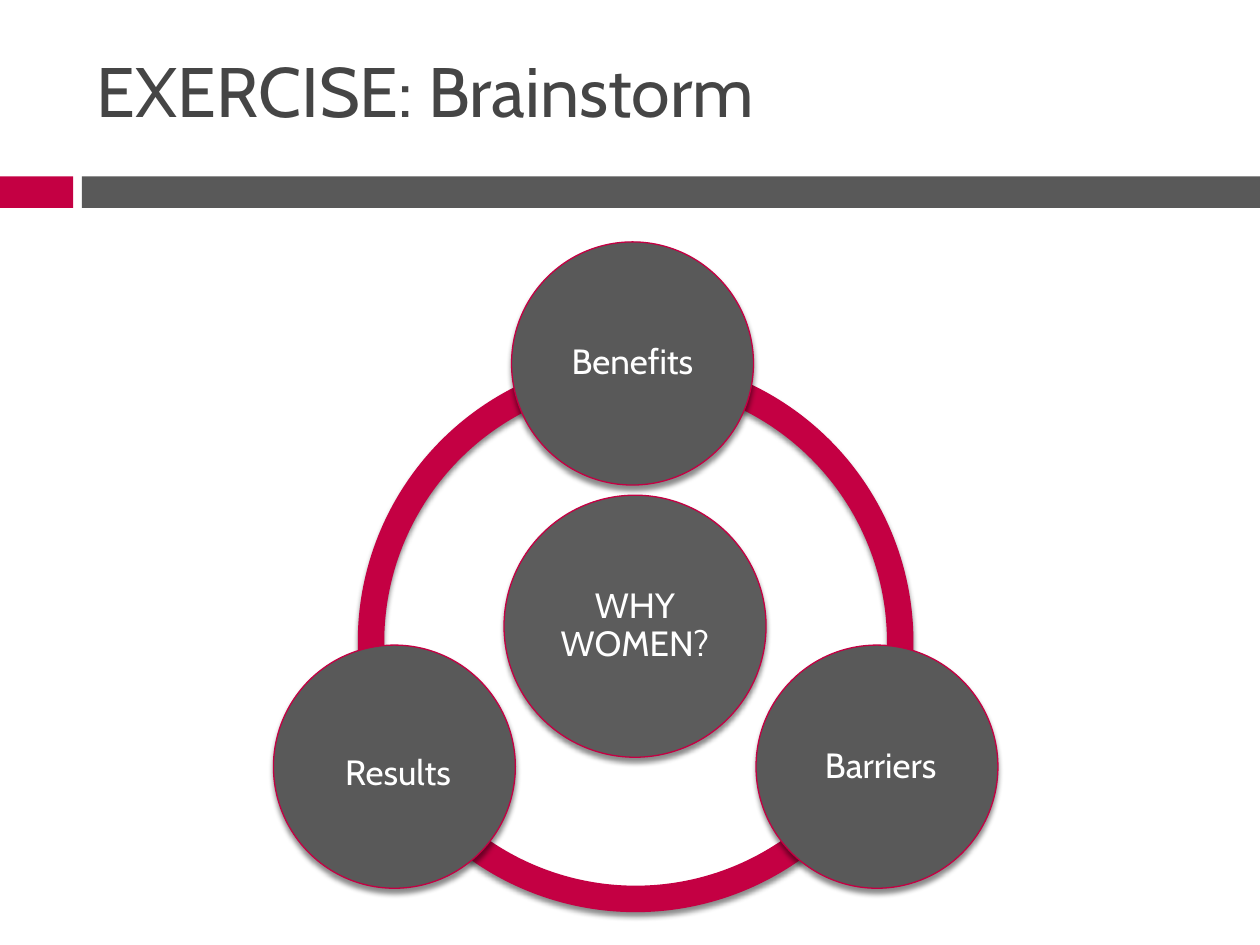
from lxml import etree
from pptx import Presentation
from pptx.dml.color import RGBColor
from pptx.enum.shapes import MSO_SHAPE as SHAPE
from pptx.enum.text import MSO_ANCHOR as ANCHOR, PP_ALIGN as ALIGN
from pptx.oxml import parse_xml
from pptx.oxml.ns import nsdecls, qn
from pptx.util import Inches, Pt

CRIMSON = RGBColor(0xC4, 0x00, 0x43)
GRAY = RGBColor(0x59, 0x59, 0x59)
HUB_GRAY = RGBColor(0x5C, 0x5C, 0x5C)
TITLE_GRAY = RGBColor(0x45, 0x45, 0x45)
WHITE = RGBColor(0xFF, 0xFF, 0xFF)

RING = 4.53
RING_THICKNESS = 0.0464
NODE_W, NODE_H = 1.92, 1.93
HUB = 2.08


class Deck:
    font = "Cabin"

    def __init__(self, width, height):
        self.prs = Presentation()
        self.prs.slide_width = Inches(width)
        self.prs.slide_height = Inches(height)
        self.s = self.prs.slides.add_slide(self.prs.slide_layouts[6])

    def shape(self, kind, x, y, w, h, fill, line=None):
        sp = self.s.shapes.add_shape(kind, Inches(x), Inches(y), Inches(w), Inches(h))
        sp.shadow.inherit = False
        sp.fill.solid()
        sp.fill.fore_color.rgb = fill
        if line is None:
            sp.line.fill.background()
        else:
            sp.line.color.rgb = line
            sp.line.width = Pt(0.75)
        return sp

    def drop_shadow(self, sp):
        effects = sp._element.spPr.find(qn("a:effectLst"))
        effects.append(parse_xml(
            f'<a:outerShdw {nsdecls("a")} blurRad="{Pt(3)}" dist="{Pt(2.4)}" '
            'dir="5400000" rotWithShape="0"><a:srgbClr val="000000">'
            '<a:alpha val="45000"/></a:srgbClr></a:outerShdw>'))

    def arc(self, x, y, start, end):
        """Ring segment running clockwise between two angles in degrees."""
        sp = self.shape(SHAPE.BLOCK_ARC, x, y, RING, RING, CRIMSON)
        for i, value in enumerate((start * 0.6, end * 0.6, RING_THICKNESS)):
            sp.adjustments[i] = value
        self.drop_shadow(sp)

    def circle(self, x, y, w, h, fill):
        self.drop_shadow(self.shape(SHAPE.OVAL, x, y, w, h, fill, CRIMSON))

    def text(self, x, y, w, h, text, size=20, color=WHITE, align=ALIGN.CENTER,
             margin=None, spacing=None):
        box = self.s.shapes.add_textbox(Inches(x), Inches(y), Inches(w), Inches(h))
        tf = box.text_frame
        tf.word_wrap = True
        tf.vertical_anchor = ANCHOR.MIDDLE
        if margin is not None:
            tf.margin_left = tf.margin_right = Inches(margin)
            tf.margin_top = tf.margin_bottom = Inches(margin)
        p = tf.paragraphs[0]
        p.alignment = align
        if spacing is not None:
            p.line_spacing = spacing
        r = p.add_run()
        r.text = text
        r.font.name = self.font
        r.font.size = Pt(size)
        r.font.color.rgb = color

    def label(self, x, y, w, h, inset, text):
        """Text in the square that fits inside a circle."""
        self.text(x + inset, y + inset, w - 2 * inset, h - 2 * inset, text,
                  margin=0.03, spacing=0.9)


def main():
    deck = Deck(10, 7.5)

    deck.shape(SHAPE.RECTANGLE, 0, 1.4, 0.58, 0.25, CRIMSON)
    deck.shape(SHAPE.RECTANGLE, 0.65, 1.4, 9.35, 0.25, GRAY)
    deck.text(0.67, 0.17, 9.33, 1.08, "EXERCISE: Brainstorm", 40, TITLE_GRAY, ALIGN.LEFT)

    for x, y, start, end in ((2.84, 2.83, 153.38, 267.7),
                             (2.78, 2.71, 30, 150),
                             (2.72, 2.83, 270.92, 26.58)):
        deck.arc(x, y, start, end)

    deck.circle(4, 3.93, HUB, HUB, HUB_GRAY)
    deck.label(4, 3.93, HUB, HUB, 0.31, "WHY WOMEN?")

    for x, y, name, shift_x, shift_y in ((4.06, 1.92, "Benefits", 0, 0),
                                         (6, 5.12, "Barriers", 0.03, 0),
                                         (2.17, 5.12, "Results", 0.03, 0.06)):
        deck.circle(x, y, NODE_W, NODE_H, GRAY)
        deck.label(x + shift_x, y + shift_y, NODE_W, NODE_H, 0.28, name)

    deck.prs.save("out.pptx")


if __name__ == "__main__":
    main()
